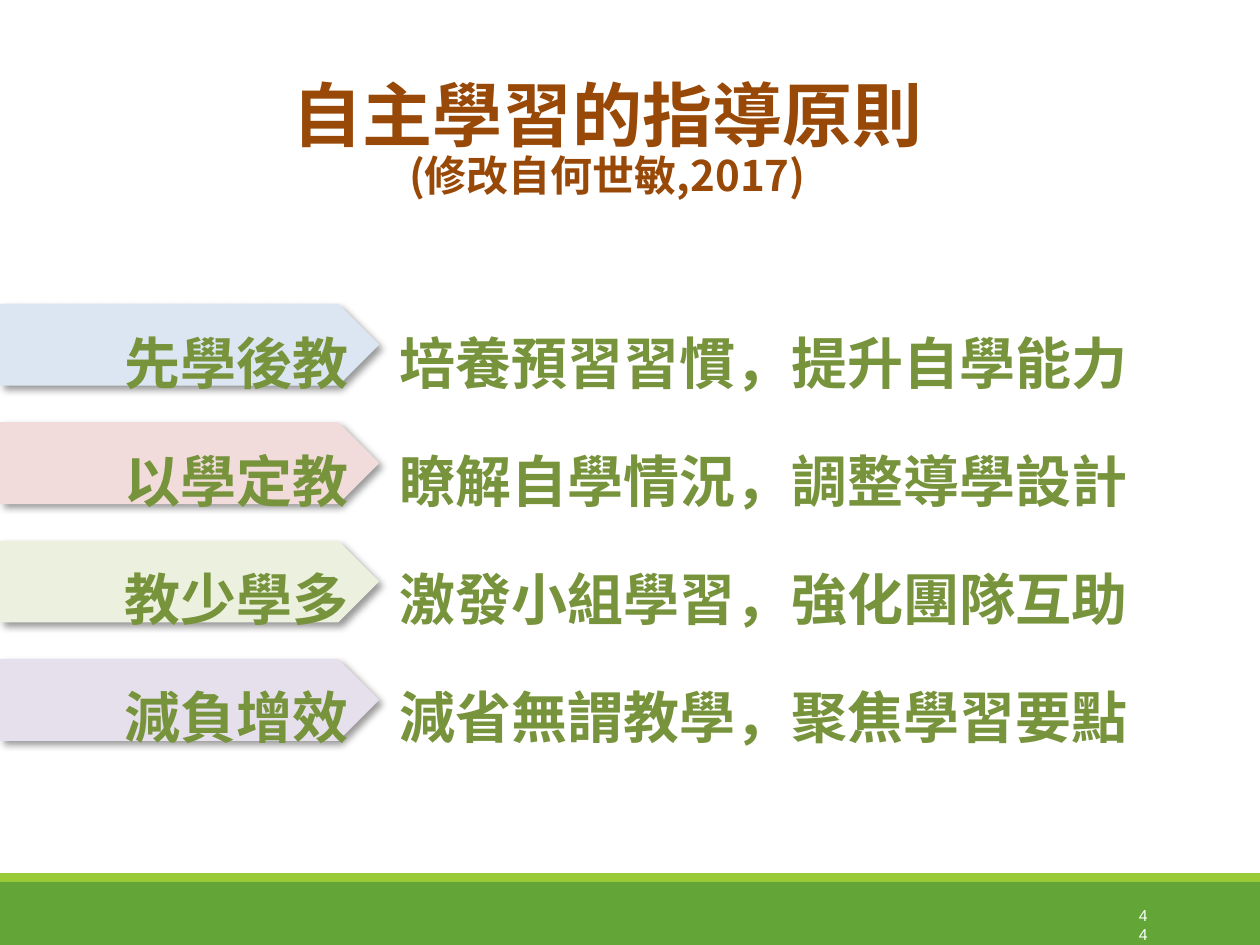
from lxml import etree
from pptx import Presentation
from pptx.dml.color import RGBColor
from pptx.enum.shapes import MSO_SHAPE
from pptx.enum.text import MSO_ANCHOR, PP_ALIGN
from pptx.oxml import parse_xml
from pptx.oxml.ns import nsdecls, qn
from pptx.util import Inches, Pt

RECT, ARROW = MSO_SHAPE.RECTANGLE, MSO_SHAPE.PENTAGON
TOP = MSO_ANCHOR.TOP
LEFT, CENTER, RIGHT = PP_ALIGN.LEFT, PP_ALIGN.CENTER, PP_ALIGN.RIGHT
GREEN, LIME = RGBColor(0x63, 0xA5, 0x37), RGBColor(0x99, 0xCB, 0x38)
BROWN, OLIVE = RGBColor(0x98, 0x48, 0x07), RGBColor(0x77, 0x93, 0x3C)
BLUE, PINK = RGBColor(0xDC, 0xE6, 0xF2), RGBColor(0xF2, 0xDC, 0xDB)
PALE, MAUVE = RGBColor(0xEB, 0xF1, 0xDE), RGBColor(0xE6, 0xE0, 0xEC)
WHITE = RGBColor(0xFF, 0xFF, 0xFF)
CJK = "Noto Sans CJK SC"

TITLE = "自主學習的指導原則"
CREDIT = "(修改自何世敏,2017)"
RULES = [
    ("先學後教", "培養預習習慣，提升自學能力", BLUE),
    ("以學定教", "瞭解自學情況，調整導學設計", PINK),
    ("教少學多", "激發小組學習，強化團隊互助", PALE),
    ("減負增效", "減省無謂教學，聚焦學習要點", MAUVE),
]
PAGE = "44"

WIDTH, HEIGHT = 10, 7.5
ROW_TOP, PITCH = 2.41, 0.94
ARROW_W, ARROW_H = 3.01, 0.65
LABEL_X, TEXT_X = 0.99, 3.17
BOX_X, BOX_Y = 0.46, 2.27

deck = Presentation()
deck.slide_width, deck.slide_height = Inches(WIDTH), Inches(HEIGHT)
slide = deck.slides.add_slide(deck.slide_layouts[6])


def block(kind, x, y, w, h, fill):
    shape = slide.shapes.add_shape(kind, *map(Inches, (x, y, w, h)))
    shape.shadow.inherit = False
    shape.fill.solid()
    shape.fill.fore_color.rgb = fill
    shape.line.fill.background()
    return shape


def drop(shape):
    """Give the shape a soft shadow towards the lower right."""
    effects = shape._element.spPr.find(qn("a:effectLst"))
    effects.append(parse_xml(
        f'<a:outerShdw {nsdecls("a")} blurRad="{Pt(4)}" dist="{Pt(3)}"'
        ' dir="2700000" algn="tl" rotWithShape="0"><a:srgbClr val="000000">'
        '<a:alpha val="40000"/></a:srgbClr></a:outerShdw>'))


def frame(x, y, w, h):
    box = slide.shapes.add_textbox(*map(Inches, (x, y, w, h)))
    box.text_frame.word_wrap = True
    box.text_frame.vertical_anchor = TOP
    return box.text_frame


def style(para, align, size, color, font, bold=False):
    para.alignment = align
    for run in para.runs:
        run.font.size, run.font.bold = Pt(size), bold
        run.font.color.rgb, run.font.name = color, font
        east = etree.SubElement(run._r.get_or_add_rPr(), qn("a:ea"))
        east.set("typeface", font)


block(RECT, 0, 7, WIDTH, 0.5, GREEN)
block(RECT, 0, 6.93, WIDTH, 0.07, LIME)

for row, (label, text, fill) in enumerate(RULES):
    drop(block(ARROW, 0, ROW_TOP + row * PITCH, ARROW_W, ARROW_H, fill))

head = frame(0, 0.56, WIDTH, 1.34)
head.text = f"{TITLE}\n{CREDIT}"
for para, size, line in zip(head.paragraphs, (40, 24), (45, 25.5)):
    style(para, CENTER, size, BROWN, CJK, True)
    para.line_spacing = Pt(line)
head.paragraphs[0]._p.get_or_add_pPr().set("marR", str(Inches(0.36)))

body = frame(BOX_X, BOX_Y, 9.03, 4.68)
body.margin_left = Inches(LABEL_X - BOX_X)
body.margin_right = body.margin_bottom = Inches(0.04)
body.margin_top = Inches(0.07)
body.text = "\n".join(f"{label}\t{text}" for label, text, fill in RULES)
for row, para in enumerate(body.paragraphs):
    para.line_spacing = Pt(57.5)
    para.space_before = Pt(10 if row else 0)
    tabs = etree.SubElement(para._p.get_or_add_pPr(), qn("a:tabLst"))
    stop = etree.SubElement(tabs, qn("a:tab"))
    stop.set("pos", str(Inches(TEXT_X - LABEL_X)))
    stop.set("algn", "l")
    style(para, LEFT, 32, OLIVE, CJK, True)

page = frame(8.94, 7.14, 0.25, 0.25)
page.text = PAGE
style(page.paragraphs[0], RIGHT, 9, WHITE, "Arial")

deck.save("out.pptx")
